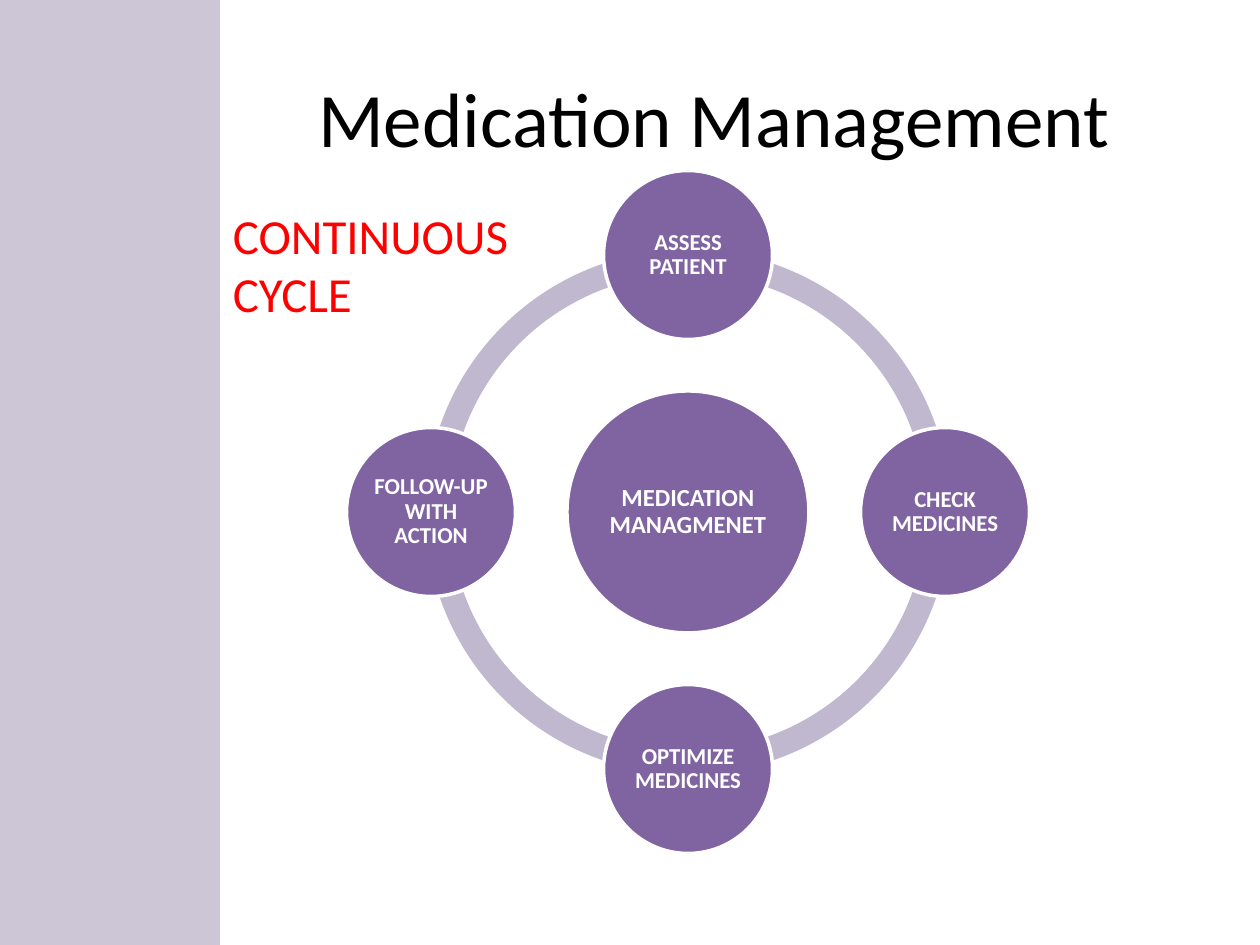
"""Build a slide showing the medication management cycle."""
from lxml import etree
from pptx import Presentation, util as u
from pptx.dml import color
from pptx.enum import shapes, text
from pptx.oxml import ns

SCALE = 914400 / 126
COLOURS = {
    "sidebar": "604A7B",
    "circle": "8064A2",
    "arc": "C0B8CE",
    "white": "FFFFFF",
    "title": "000000",
    "cycle": "FF0000",
}


def px(length):
    return u.Emu(round(length * SCALE))


def rgb(name):
    return color.RGBColor.from_string(COLOURS[name])


def write(frame, content, size, colour, bold=False, align=text.PP_ALIGN.LEFT,
          anchor=text.MSO_ANCHOR.TOP, margins=(13, 6), spacing=None):
    frame.word_wrap = True
    frame.vertical_anchor = anchor
    frame.margin_left = frame.margin_right = px(margins[0])
    frame.margin_top = frame.margin_bottom = px(margins[1])
    for index, line in enumerate(content.split("\n")):
        paragraph = frame.add_paragraph() if index else frame.paragraphs[0]
        paragraph.alignment = align
        paragraph.line_spacing = spacing
        run = paragraph.add_run()
        run.text = line
        run.font.name = "Calibri"
        run.font.size = u.Pt(size)
        run.font.bold = bold
        run.font.color.rgb = rgb(colour)


class CycleSlide:
    def __init__(self, slide, font="Calibri"):
        self.slide = slide
        self.font = font

    def shape(self, kind, left, top, width, height, fill):
        shape = self.slide.shapes.add_shape(kind, px(left), px(top), px(width), px(height))
        shape.shadow.inherit = False
        shape.fill.solid()
        shape.fill.fore_color.rgb = rgb(fill)
        shape.line.fill.background()
        return shape

    def sidebar(self, width, height, opacity):
        shape = self.shape(shapes.MSO_SHAPE.RECTANGLE, 0, 0, width, height, "sidebar")
        fill = shape.fill._xPr.find(ns.qn("a:solidFill"))
        etree.SubElement(fill[0], ns.qn("a:alpha"), val=str(opacity * 1000))

    def label(self, left, top, width, height, content, **style):
        box = self.slide.shapes.add_textbox(px(left), px(top), px(width), px(height))
        write(box.text_frame, content, **style)

    def arc(self, x, y, diameter, start):
        shape = self.shape(shapes.MSO_SHAPE.BLOCK_ARC, x - diameter / 2, y - diameter / 2,
                           diameter, diameter, "arc")
        for index, value in enumerate((start * 0.6, (start + 90) % 360 * 0.6, 0.046)):
            shape.adjustments[index] = value

    def circle(self, x, y, diameter, content, size):
        shape = self.shape(shapes.MSO_SHAPE.OVAL, x - diameter / 2, y - diameter / 2,
                           diameter, diameter, "circle")
        shape.line.color.rgb = rgb("white")
        shape.line.width = u.Pt(2)
        write(shape.text_frame, content, size=size, colour="white", bold=True,
              align=text.PP_ALIGN.CENTER, anchor=text.MSO_ANCHOR.MIDDLE,
              margins=(2, 2), spacing=0.9)


def main():
    presentation = Presentation()
    presentation.slide_width, presentation.slide_height = px(1260), px(945)
    cycle = CycleSlide(presentation.slides.add_slide(presentation.slide_layouts[6]))
    cycle.sidebar(220, 945, opacity=31)
    cycle.label(231, 38, 966, 158, "Medication Management", size=44, colour="title",
                align=text.PP_ALIGN.CENTER, anchor=text.MSO_ANCHOR.MIDDLE)

    x, y, radius = 688, 512, 257
    for start in (180, 90, 0, 270):
        cycle.arc(x, y, 525, start)
    cycle.circle(x, y, 242, "MEDICATION MANAGMENET", 14)
    steps = (
        ("ASSESS PATIENT", 0, -1),
        ("CHECK MEDICINES", 1, 0),
        ("OPTIMIZE MEDICINES", 0, 1),
        ("FOLLOW-UP WITH ACTION", -1, 0),
    )
    for content, across, down in steps:
        cycle.circle(x + across * radius, y + down * radius, 169, content, 13)

    cycle.label(220, 199, 388, 131, "CONTINUOUS\nCYCLE", size=28, colour="cycle")
    presentation.save("out.pptx")


if __name__ == "__main__":
    main()
